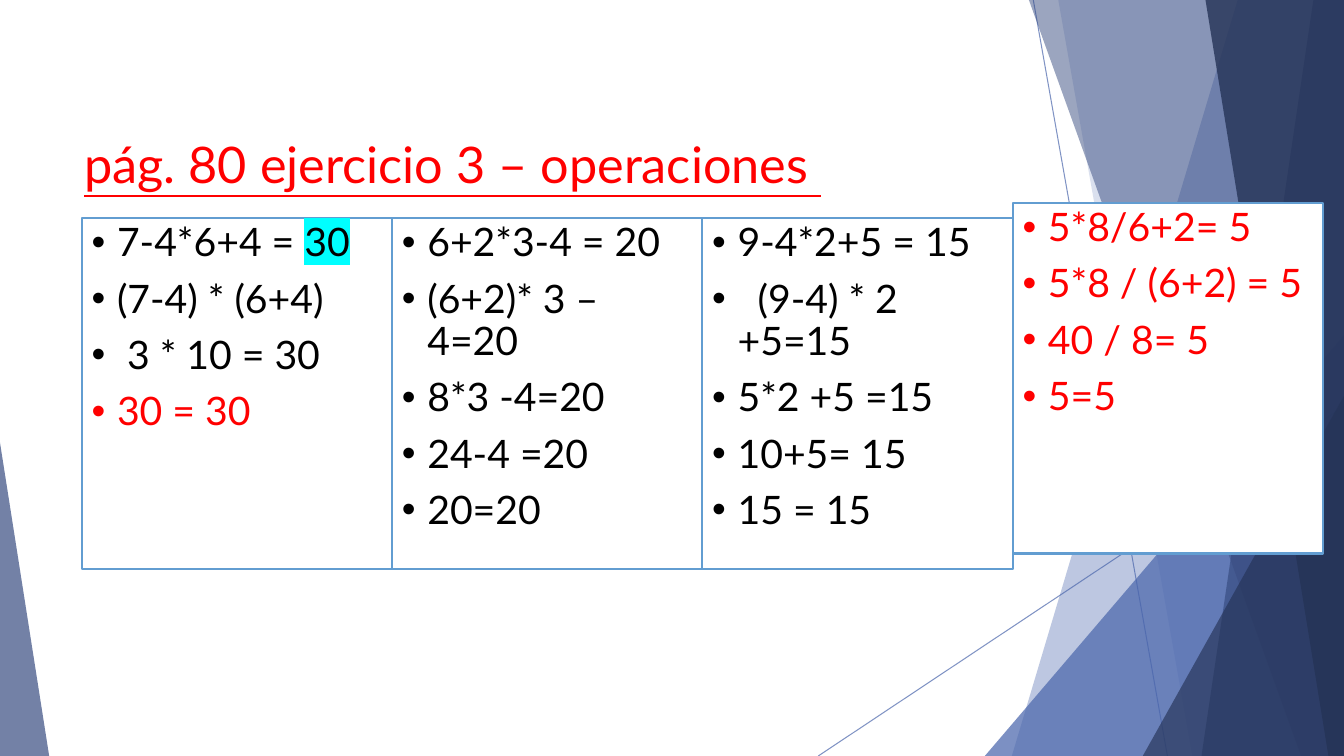
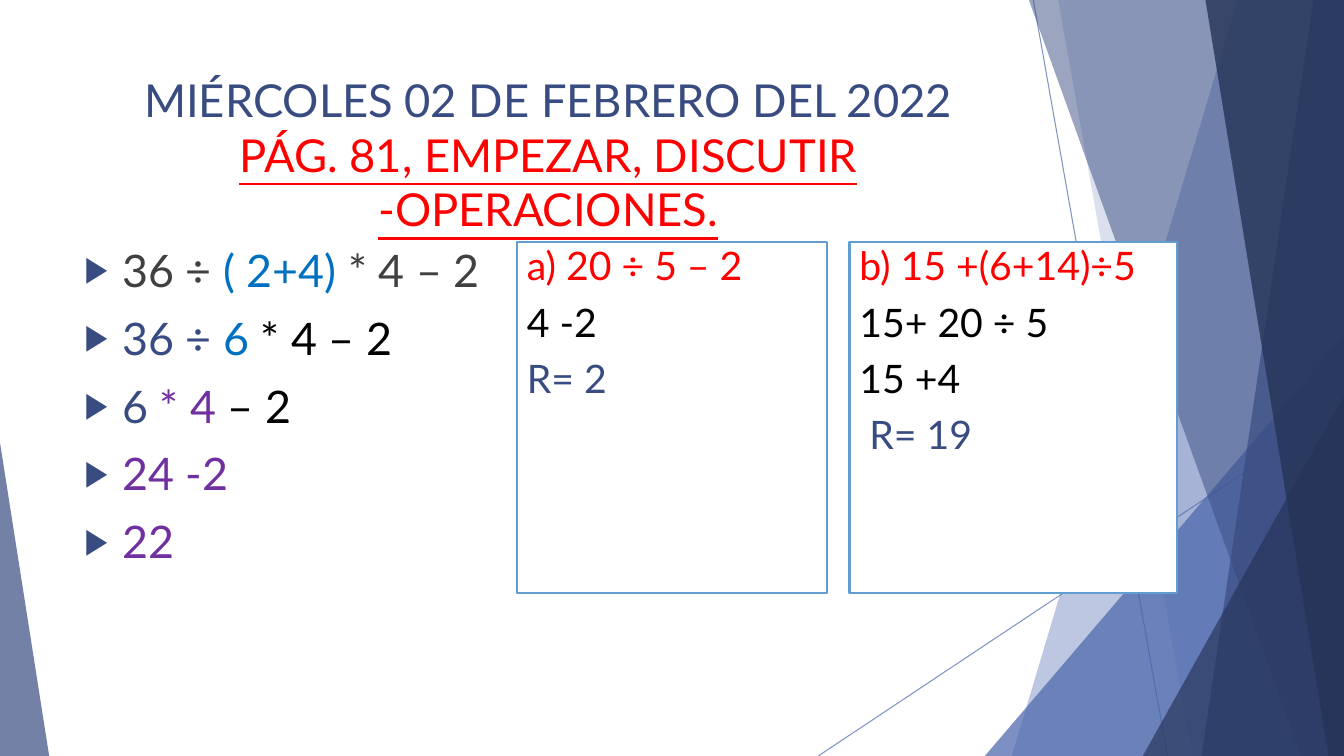
from lxml.etree import SubElement as Sub
from pptx import Presentation
from pptx.dml.color import RGBColor
from pptx.enum.shapes import MSO_CONNECTOR as Link, MSO_SHAPE as Kind
from pptx.enum.text import MSO_ANCHOR as Anchor, PP_ALIGN as Align
from pptx.oxml.ns import qn
from pptx.util import Cm, Pt

FONT = "Lato"
WIDE, HIGH = 33.87, 19.05
BLUE = RGBColor(0x4A, 0x66, 0xAC)
NAVY = RGBColor(0x38, 0x4C, 0x81)
DARK = RGBColor(0x25, 0x33, 0x56)
EDGE = RGBColor(0x62, 0x9D, 0xD1)
SKY = RGBColor(0x00, 0x70, 0xC0)
PLUM = RGBColor(0x70, 0x30, 0xA0)
GRAY = RGBColor(0x40, 0x40, 0x40)
RED = RGBColor(0xFF, 0x00, 0x00)
CYAN = RGBColor(0x00, 0xFF, 0xFF)
BLACK = RGBColor(0x00, 0x00, 0x00)
WHITE = RGBColor(0xFF, 0xFF, 0xFF)

TITLE = (1.88, 1.7, 23.88, 3.66)
CARD_W, CARD_H = 7.82, 8.84

RAYS = [(26.04, 0, 29.42, HIGH), (WIDE, 10.24, 20.62, HIGH)]
# Bands give the top and bottom x of their left edge; peaks give a box and the tip.
FACETS = [
    ("band", (31.19, 25.5), BLUE, 36),
    ("band", (26.67, 30.05), BLUE, 20),
    ("peak", (24.82, 8.46, 9.05, 10.59, 1), BLUE, 72),
    ("band", (25.93, 32.79), NAVY, 50),
    ("band", (33.1, 30.28), NAVY, 70),
    ("band", (30.38, 33.48), DARK, 80),
    ("peak", (28.8, 9.98, 5.07, 9.07, 1), DARK, 66),
    ("peak", (0, 11.15, 1.24, 7.9, 0), NAVY, 70),
]


def cms(nums):
    return [Cm(n) for n in nums]


def fade(shape, pct):
    """Make the shape's own colour pct percent opaque."""
    color = next(shape.element.iter(qn("a:srgbClr")))
    Sub(color, qn("a:alpha"), val=str(pct * 1000))


def draw_ray(slide, ends):
    ray = slide.shapes.add_connector(Link.STRAIGHT, *cms(ends))
    ray.line.color.rgb = BLUE
    ray.line.width = Pt(0.75)
    fade(ray, 70)
    Sub(ray.element.spPr, qn("a:effectLst"))


def draw_band(slide, top, low):
    pen = slide.shapes.build_freeform(Cm(top), 0)
    pen.add_line_segments([cms(p) for p in
                           ((WIDE, 0), (WIDE, HIGH), (low, HIGH))])
    return pen.convert_to_shape()


def draw_peak(slide, left, top, wide, high, tip):
    peak = slide.shapes.add_shape(Kind.ISOSCELES_TRIANGLE,
                                  *cms((left, top, wide, high)))
    peak.adjustments[0] = tip
    return peak


def draw_decor(slide):
    for ends in RAYS:
        draw_ray(slide, ends)
    for kind, nums, color, pct in FACETS:
        draw = draw_band if kind == "band" else draw_peak
        facet = draw(slide, *nums)
        facet.shadow.inherit = False
        facet.fill.solid()
        facet.fill.fore_color.rgb = color
        facet.line.fill.background()
        fade(facet, pct)


def style(run, size, color, mark=None):
    run.font.name = FONT
    run.font.size = Pt(size)
    run.font.color.rgb = color
    if mark:
        glow = run.font.fill._xPr.makeelement(qn("a:highlight"), {})
        Sub(glow, qn("a:srgbClr"), val=str(mark))
        run._r.rPr.find(qn("a:solidFill")).addnext(glow)


def bullet(par, char, indent, color=None, scale=None):
    props = par._p.get_or_add_pPr()
    props.set("marL", str(Cm(indent)))
    props.set("indent", str(-Cm(indent)))
    if color:
        Sub(Sub(props, qn("a:buClr")), qn("a:srgbClr"), val=str(color))
    if scale:
        Sub(props, qn("a:buSzPct"), val=str(scale * 1000))
    Sub(props, qn("a:buFont"), typeface="Arial")
    Sub(props, qn("a:buChar"), char=char)


def write(frame, rows, size, space, dot=None):
    """Fill the frame; a row is a list of (text, colour[, highlight])."""
    frame.word_wrap = True
    frame.vertical_anchor = Anchor.TOP
    for i, row in enumerate(rows):
        par = frame.add_paragraph() if i else frame.paragraphs[0]
        par.alignment = Align.LEFT
        par.line_spacing = space
        par.space_before = Pt(10)
        if dot:
            bullet(par, *dot)
        for text, *look in row:
            run = par.add_run()
            run.text = text
            style(run, size, *look)


def add_title(slide, text, size, colors, align=Align.LEFT, inset=0.13):
    """Title whose last line is underlined; colors has one per line."""
    frame = slide.shapes.add_textbox(*cms(TITLE)).text_frame
    frame.word_wrap = True
    frame.margin_top = Cm(inset)
    par = frame.paragraphs[0]
    par.text = text
    par.alignment = align
    for run, color in zip(par.runs, colors):
        style(run, size, color)
    par.runs[-1].font.underline = True


def add_card(slide, left, top, rows, wide=CARD_W, dot=None):
    card = slide.shapes.add_shape(Kind.RECTANGLE,
                                  *cms((left, top, wide, CARD_H)))
    card.shadow.inherit = False
    card.fill.solid()
    card.fill.fore_color.rgb = WHITE
    card.line.color.rgb = EDGE
    card.line.width = Pt(1.5)
    write(card.text_frame, rows, 28, 0.9, dot)


def add_steps(slide, box, rows):
    frame = slide.shapes.add_textbox(*cms(box)).text_frame
    write(frame, rows, 32, 1.0, ("▶", 0.95, NAVY, 80))


def plain(color, *texts):
    return [[(text, color)] for text in texts]


def page_80(slide):
    draw_decor(slide)
    add_title(slide, "pág. 80 ejercicio 3 – operaciones ", 36, [RED],
              inset=1.65)
    cards = [
        [[("7-4*6+4 = ", BLACK), ("30", BLACK, CYAN)],
         *plain(BLACK, "(7-4) * (6+4)", " 3 * 10 = 30"),
         *plain(RED, "30 = 30")],
        plain(BLACK, "6+2*3-4 = 20", "(6+2)* 3 – 4=20", "8*3 -4=20",
              "24-4 =20", "20=20"),
        plain(BLACK, "9-4*2+5 = 15", "  (9-4) * 2 +5=15", "5*2 +5 =15",
              "10+5= 15", "15 = 15"),
        plain(RED, "5*8/6+2= 5", "5*8 / (6+2) = 5", "40 / 8= 5", "5=5"),
    ]
    tops = [5.49, 5.49, 5.49, 5.11]
    for i, (top, rows) in enumerate(zip(tops, cards)):
        add_card(slide, 2.06 + i * CARD_W, top, rows, dot=("•", 0.64))


def page_81(slide):
    draw_decor(slide)
    add_title(slide, "MIÉRCOLES 02 DE FEBRERO DEL 2022\v"
              "PÁG. 81, EMPEZAR, DISCUTIR -OPERACIONES.",
              32.4, [NAVY, RED], Align.CENTER)
    add_steps(slide, (1.88, 5.99, 10.57, 10.77), [
        [("36 ÷ ", GRAY), ("( 2+4) ", SKY), ("* 4 – 2", GRAY)],
        [("36 ÷ ", NAVY), ("6 ", SKY), ("* 4 – 2", BLACK)],
        [("6", NAVY), (" * 4 ", PLUM), ("– 2", BLACK)],
        *plain(PLUM, "24 -2", "22"),
    ])
    add_card(slide, 13.03, 6.1, [
        *plain(RED, "a) 20 ÷ 5 – 2"),
        *plain(BLACK, "4 -2"),
        *plain(NAVY, "R= 2"),
    ])
    add_card(slide, 21.41, 6.1, [
        *plain(RED, "b) 15 +(6+14)÷5"),
        *plain(BLACK, "15+ 20 ÷ 5", "15 +4"),
        *plain(NAVY, " R= 19"),
    ], wide=8.26)


def main():
    deck = Presentation()
    deck.slide_width, deck.slide_height = Cm(WIDE), Cm(HIGH)
    for build in (page_80, page_81):
        build(deck.slides.add_slide(deck.slide_layouts[6]))
    deck.save("out.pptx")


if __name__ == "__main__":
    main()
